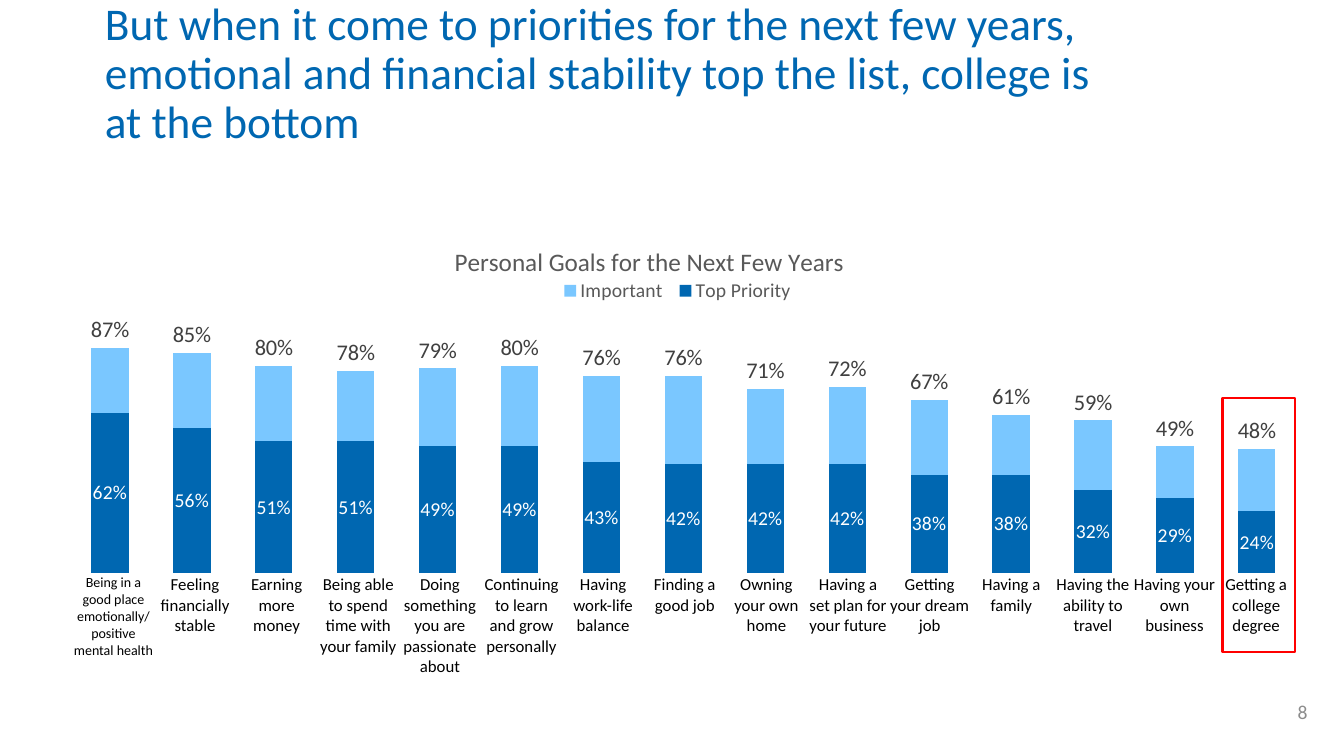
from dataclasses import dataclass

from lxml.etree import SubElement
from pptx import Presentation
from pptx.chart.data import CategoryChartData
from pptx.dml.color import RGBColor
from pptx.enum.chart import XL_CHART_TYPE, XL_LABEL_POSITION, XL_LEGEND_POSITION
from pptx.enum.shapes import MSO_SHAPE
from pptx.enum.text import MSO_ANCHOR, MSO_AUTO_SIZE, PP_ALIGN
from pptx.oxml.ns import qn
from pptx.util import Cm, Pt


@dataclass(frozen=True)
class Theme:
    font: str = "Calibri"
    blue: str = "0067B1"
    light_blue: str = "7AC7FF"
    black: str = "000000"
    white: str = "FFFFFF"
    red: str = "FF0000"
    grey: str = "595959"
    dark_grey: str = "404040"
    page_grey: str = "8C8C8C"
    title_size: float = 32.4
    chart_title_size: float = 18
    total_size: float = 16
    small_size: float = 14
    goal_size: float = 12
    long_goal_size: float = 10


@dataclass(frozen=True)
class Box:
    left: float
    top: float
    width: float
    height: float

    def lengths(self) -> tuple:
        return Cm(self.left), Cm(self.top), Cm(self.width), Cm(self.height)


@dataclass(frozen=True)
class Goal:
    label: str
    important: float
    top_priority: float


@dataclass(frozen=True)
class SeriesStyle:
    fill: str
    label_color: str
    label_size: float
    position: XL_LABEL_POSITION


THEME = Theme()
TITLE = (
    "But when it come to priorities for the next few years, emotional and "
    "financial stability top the list, college is at the bottom"
)
GOALS = [
    Goal("Being in a good place emotionally/ positive mental health", 0.87, 0.62),
    Goal("Feeling financially stable", 0.85, 0.56),
    Goal("Earning more money", 0.80, 0.51),
    Goal("Being able to spend time with your family", 0.78, 0.51),
    Goal("Doing something you are passionate about", 0.79, 0.49),
    Goal("Continuing to learn and grow personally", 0.80, 0.49),
    Goal("Having work-life balance", 0.76, 0.43),
    Goal("Finding a good job", 0.76, 0.42),
    Goal("Owning your own home", 0.71, 0.42),
    Goal("Having a set plan for your future", 0.72, 0.42),
    Goal("Getting your dream job", 0.67, 0.38),
    Goal("Having a family", 0.61, 0.38),
    Goal("Having the ability to travel", 0.59, 0.32),
    Goal("Having your own business", 0.49, 0.29),
    Goal("Getting a college degree", 0.48, 0.24),
]
SERIES_STYLES = [
    SeriesStyle(THEME.light_blue, THEME.dark_grey, THEME.total_size,
                XL_LABEL_POSITION.OUTSIDE_END),
    SeriesStyle(THEME.blue, THEME.white, THEME.small_size, XL_LABEL_POSITION.CENTER),
]


def style_font(font, size: float, color: str) -> None:
    font.name = THEME.font
    font.size = Pt(size)
    font.bold = False
    font.color.rgb = RGBColor.from_string(color)


def write_text(text_frame, text: str, size: float, color: str, alignment: PP_ALIGN) -> None:
    text_frame.text = text
    text_frame.word_wrap = True
    paragraph = text_frame.paragraphs[0]
    paragraph.alignment = alignment
    style_font(paragraph.runs[0].font, size, color)


def place_chart_part(element, index: int, inner: bool = False, **fractions: float) -> None:
    for layout in element.findall(qn("c:layout")):
        element.remove(layout)
    layout = SubElement(element, qn("c:layout"))
    element.insert(index, layout)
    manual = SubElement(layout, qn("c:manualLayout"))
    if inner:
        SubElement(manual, qn("c:layoutTarget")).set("val", "inner")
    for axis in ("x", "y"):
        SubElement(manual, qn(f"c:{axis}Mode")).set("val", "edge")
    for name, fraction in fractions.items():
        SubElement(manual, qn(f"c:{name}")).set("val", str(fraction))


def add_title(slide) -> None:
    title = slide.shapes.title
    title.left, title.top, title.width, title.height = Box(2.39, 0.53, 25.83, 2.69).lengths()
    text_frame = title.text_frame
    write_text(text_frame, TITLE, THEME.title_size, THEME.blue, PP_ALIGN.LEFT)
    text_frame.auto_size = MSO_AUTO_SIZE.NONE
    text_frame.vertical_anchor = MSO_ANCHOR.MIDDLE
    text_frame.paragraphs[0].line_spacing = 0.9


def add_page_number(slide) -> None:
    text_frame = slide.shapes.add_textbox(*Box(30.71, 17.42, 2.49, 1.02).lengths()).text_frame
    write_text(text_frame, "8", THEME.small_size, THEME.page_grey, PP_ALIGN.RIGHT)
    text_frame.vertical_anchor = MSO_ANCHOR.MIDDLE


def add_goal_chart(slide) -> None:
    data = CategoryChartData(number_format="0%")
    data.categories = [str(number) for number in range(1, len(GOALS) + 1)]
    data.add_series("Important", [goal.important for goal in GOALS])
    data.add_series("Top Priority", [goal.top_priority for goal in GOALS])
    chart = slide.shapes.add_chart(
        XL_CHART_TYPE.COLUMN_CLUSTERED, *Box(0.2, 5.51, 32.77, 12.98).lengths(), data
    ).chart
    style_font(chart.font, THEME.long_goal_size, THEME.black)

    chart.has_title = True
    write_text(chart.chart_title.text_frame, "Personal Goals for the Next Few Years",
               THEME.chart_title_size, THEME.grey, PP_ALIGN.CENTER)
    place_chart_part(chart.chart_title._element, 1, x=0.34, y=0.04)

    chart.has_legend = True
    chart.legend.position = XL_LEGEND_POSITION.TOP
    chart.legend.include_in_layout = False
    style_font(chart.legend.font, THEME.small_size, THEME.grey)
    place_chart_part(chart.legend._element, 1, x=0.42, y=0.11, w=0.19, h=0.06)

    chart.category_axis.visible = False
    value_axis = chart.value_axis
    value_axis.visible = False
    value_axis.has_major_gridlines = False
    value_axis.minimum_scale, value_axis.maximum_scale = 0, 1

    plot = chart.plots[0]
    plot.gap_width, plot.overlap = 120, 100
    plot.vary_by_categories = False
    plot_area = chart._chartSpace.find(f".//{qn('c:plotArea')}")
    place_chart_part(plot_area, 0, inner=True, x=0.047, y=0.185, w=0.945, h=0.504)
    for series, style in zip(plot.series, SERIES_STYLES):
        series.format.fill.solid()
        series.format.fill.fore_color.rgb = RGBColor.from_string(style.fill)
        labels = series.data_labels
        labels.show_value = True
        labels.number_format = "0%"
        labels.number_format_is_linked = False
        labels.position = style.position
        style_font(labels.font, style.label_size, style.label_color)


def add_goal_labels(slide) -> None:
    box = Box(1.83, 14.48, 30.86, 2.92)
    table = slide.shapes.add_table(1, len(GOALS), *box.lengths()).table
    table.first_row = False
    table.horz_banding = False
    for index, goal in enumerate(GOALS):
        table.columns[index].width = Cm(box.width / len(GOALS))
        cell = table.cell(0, index)
        cell.fill.background()
        cell.margin_left = cell.margin_right = cell.margin_top = cell.margin_bottom = 0
        size = THEME.goal_size if index else THEME.long_goal_size
        write_text(cell.text_frame, goal.label, size, THEME.black, PP_ALIGN.CENTER)


def add_college_highlight(slide) -> None:
    shape = slide.shapes.add_shape(MSO_SHAPE.RECTANGLE, *Box(30.81, 10.03, 1.83, 6.4).lengths())
    shape.shadow.inherit = False
    shape.fill.background()
    shape.line.color.rgb = RGBColor.from_string(THEME.red)
    shape.line.width = Pt(1.5)


def main() -> None:
    presentation = Presentation()
    presentation.slide_width, presentation.slide_height = Cm(33.87), Cm(19.05)
    slide = presentation.slides.add_slide(presentation.slide_layouts[5])
    add_title(slide)
    add_page_number(slide)
    add_goal_chart(slide)
    add_goal_labels(slide)
    add_college_highlight(slide)
    presentation.save("out.pptx")


if __name__ == "__main__":
    main()
